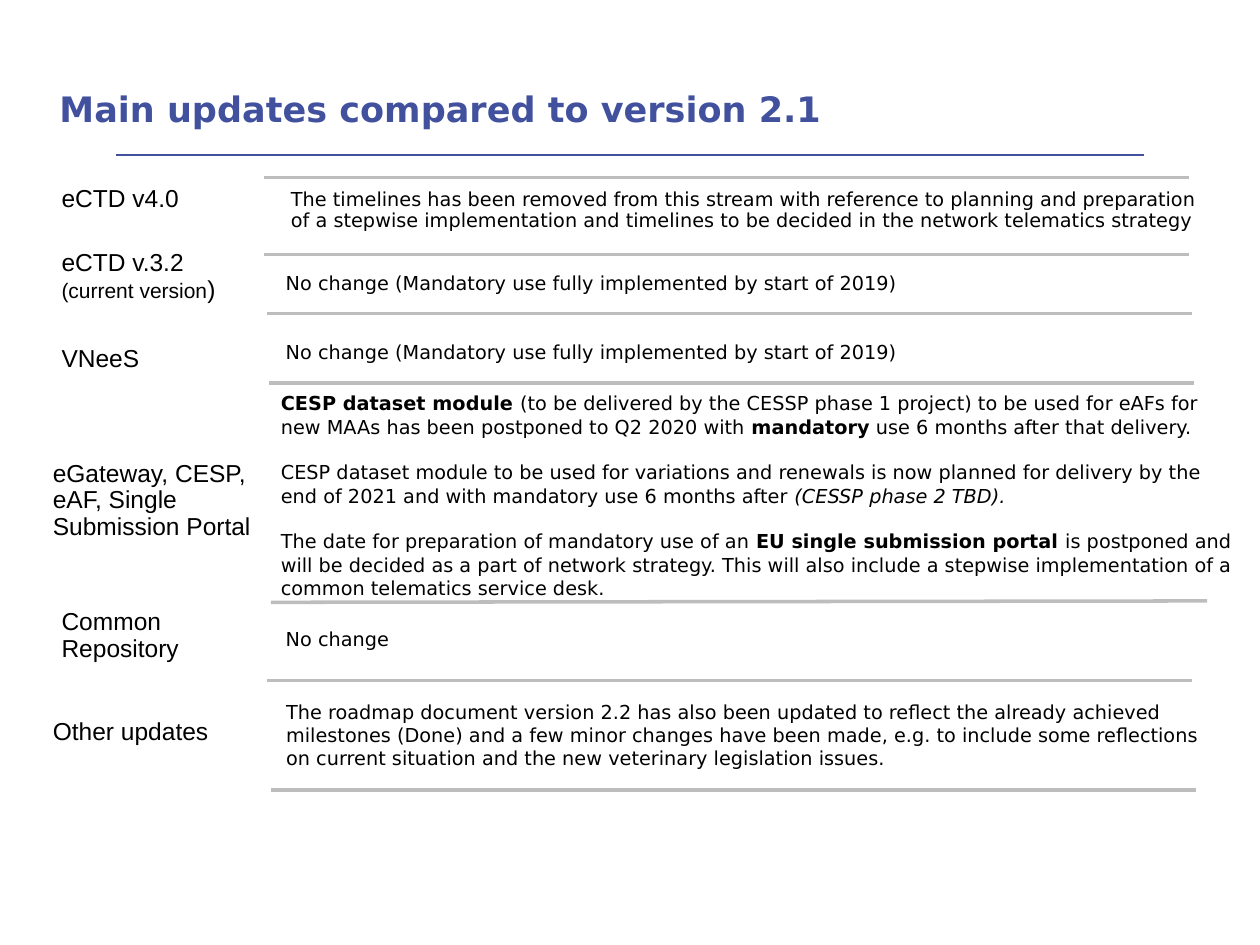
from dataclasses import dataclass

from lxml.etree import SubElement
from pptx import Presentation
from pptx.dml.color import RGBColor
from pptx.enum.shapes import MSO_CONNECTOR
from pptx.enum.text import MSO_ANCHOR
from pptx.oxml.ns import qn
from pptx.util import Pt


@dataclass(frozen=True)
class Theme:
    accent: str = "42519E"
    ink: str = "000000"
    rule: str = "BDBDBD"
    label_font: str = "Arial"
    body_font: str = "DejaVu Sans"
    title_size: int = 20
    label_size: int = 14
    note_size: int = 12
    body_size: int = 11


THEME = Theme()
RULE_WIDTH = 528.5

# left, top, width, height, paragraphs; a run is (text, format)
LABELS = [
    (30.2, 101.5, 131.8, 74.9, ["eCTD v4.0"]),
    (30.2, 138.2, 131.8, 74.9,
     ["eCTD v.3.2", [("(current version", {"size": THEME.note_size}), (")", {})]]),
    (30.2, 193, 131.8, 37.4, ["VNeeS"]),
    (25.2, 258.5, 131.8, 74.9, ["eGateway, CESP, eAF, Single Submission Portal"]),
    (30.2, 343.4, 103, 74.9, ["Common Repository"]),
    (25.2, 406, 131.8, 51.8, ["Other updates"]),
]

BOLD = {"bold": True}
ITALIC = {"italic": True}
NO_CHANGE = "No change (Mandatory use fully implemented by start of 2019)"
PORTAL_UPDATES = [
    [("CESP dataset module ", BOLD),
     ("(to be delivered by the CESSP phase 1 project) to be used for eAFs for new MAAs "
      "has been postponed to Q2 2020 with ", {}),
     ("mandatory", BOLD),
     (" use 6 months after that delivery.", {})],
    [("CESP dataset module to be used for variations and renewals is now planned for "
      "delivery by the end of 2021 and with mandatory use 6 months after ", {}),
     ("(CESSP phase 2 TBD).", ITALIC)],
    [("The date for preparation of mandatory use of an ", {}),
     ("EU single submission portal ", BOLD),
     ("is postponed and will be decided as a part of network strategy. This will also "
      "include a stepwise implementation of a common telematics service desk.", {})],
]
UPDATES = [
    (153.4, 220.3, 558.3, 140.4, PORTAL_UPDATES),
    (156.2, 151.2, 562.3, 20.9, [NO_CHANGE]),
    (156.2, 190.8, 536.4, 20.9, [NO_CHANGE]),
    (156.2, 355, 522, 20.9, ["No change"]),
    (156.4, 396.7, 539.3, 47.5,
     ["The roadmap document version 2.2 has also been updated to reflect the already "
      "achieved milestones (Done) and a few minor changes have been made, e.g. to include "
      "some reflections on current situation and the new veterinary legislation issues."]),
]
TIMELINES = (
    "The timelines has been removed from this stream with reference to planning and "
    "preparation of a stepwise implementation and timelines to be decided in the network "
    "telematics strategy")

# left, top of each row rule
RULES = [(150.7, 101.5), (150.7, 145.4), (152.6, 179.2), (153.6, 218.9),
         (152.6, 388.8), (154.8, 451.4)]


def add_text(s, box, paragraphs, *, font=THEME.body_font, size=THEME.body_size,
             color=THEME.ink, bold=False, margins=(7.2, 3.6), spacing=1.0, gap=0,
             anchor=MSO_ANCHOR.TOP):
    """Add a wrapped text box; each paragraph is a string or a list of runs."""
    tf = s.shapes.add_textbox(*map(Pt, box)).text_frame
    tf.word_wrap = True
    tf.vertical_anchor = anchor
    tf.margin_left = tf.margin_right = Pt(margins[0])
    tf.margin_top = tf.margin_bottom = Pt(margins[1])
    for i, runs in enumerate(paragraphs):
        p = tf.add_paragraph() if i else tf.paragraphs[0]
        p.line_spacing = spacing
        if i:
            p.space_before = Pt(gap)
        for text, fmt in [(runs, {})] if isinstance(runs, str) else runs:
            r = p.add_run()
            r.text = text
            r.font.name = font
            r.font.size = Pt(fmt.get("size", size))
            r.font.bold = fmt.get("bold", bold)
            r.font.italic = fmt.get("italic", False)
            r.font.color.rgb = RGBColor.from_string(color)


def add_rule(s, x1, y1, x2, y2, color=THEME.rule, width=2):
    line = s.shapes.add_connector(MSO_CONNECTOR.STRAIGHT, *map(Pt, (x1, y1, x2, y2)))
    line.line.color.rgb = RGBColor.from_string(color)
    line.line.width = Pt(width)
    SubElement(line._element.spPr, qn("a:effectLst"))


def main():
    prs = Presentation()
    prs.slide_width, prs.slide_height = Pt(720), Pt(540)
    s = prs.slides.add_slide(prs.slide_layouts[6])

    add_rule(s, 66.2, 88.6, 653.8, 88.6, THEME.accent, 0.75)
    add_text(s, (34, 25.9, 470.9, 48.2), ["Main updates compared to version 2.1"],
             size=THEME.title_size, color=THEME.accent, bold=True, margins=(0, 0),
             anchor=MSO_ANCHOR.BOTTOM)

    for x, y in RULES:
        add_rule(s, x, y, x + RULE_WIDTH, y)
    add_rule(s, 154.8, 344.2, 689.8, 343.4)

    for *box, paragraphs in LABELS:
        add_text(s, box, paragraphs, font=THEME.label_font, size=THEME.label_size,
                 margins=(5, 5), spacing=0.9)
    add_text(s, (161.3, 103.7, 528.5, 38.9), [TIMELINES], margins=(5, 5), spacing=0.9)
    for *box, paragraphs in UPDATES:
        add_text(s, box, paragraphs, gap=13)

    prs.save("out.pptx")


if __name__ == "__main__":
    main()
